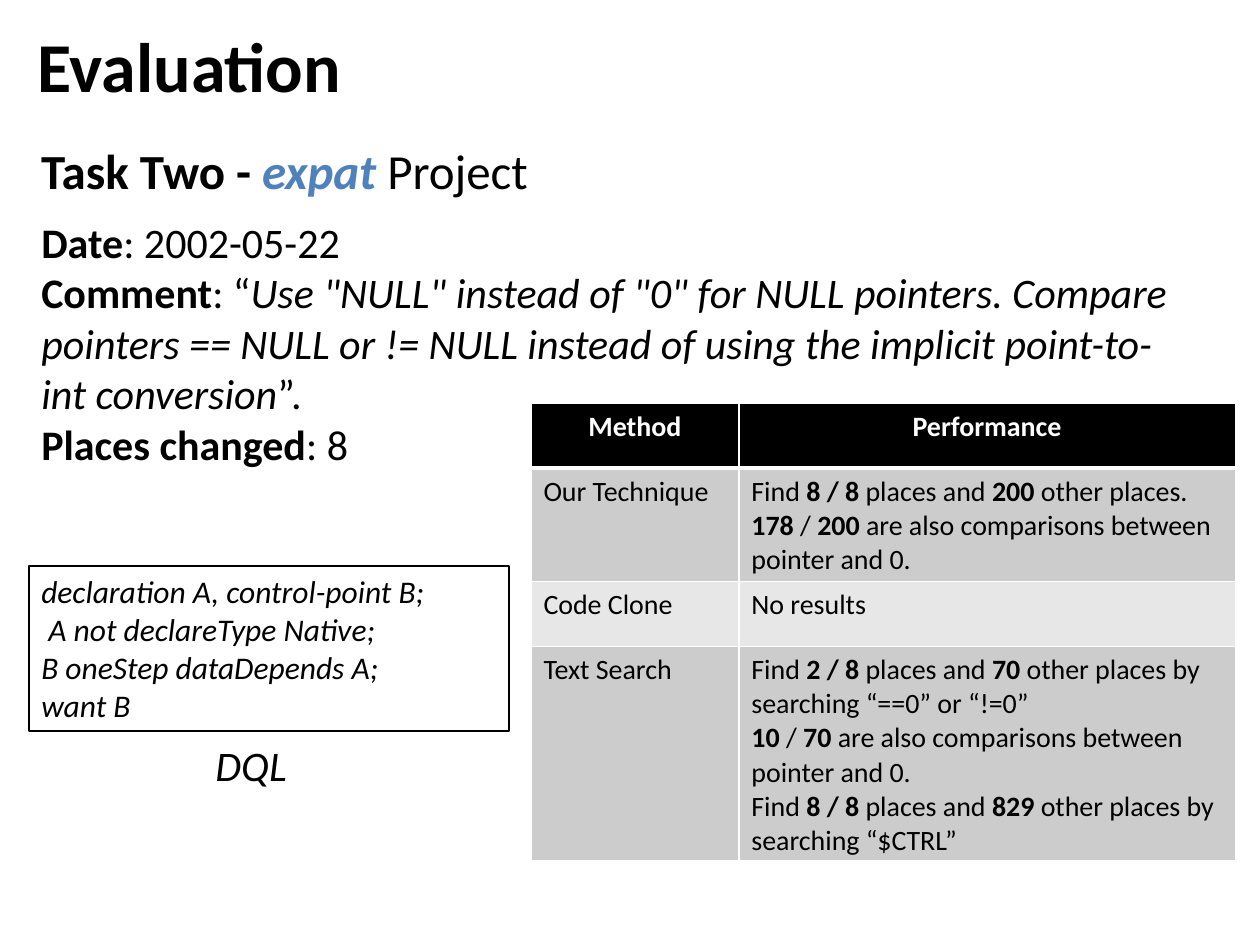
from lxml import etree
from pptx import Presentation
from pptx.dml.color import RGBColor
from pptx.enum.shapes import MSO_SHAPE
from pptx.enum.text import MSO_ANCHOR, PP_ALIGN
from pptx.oxml.ns import qn
from pptx.util import Pt

RECT = MSO_SHAPE.RECTANGLE
TOP = MSO_ANCHOR.TOP
LEFT, CENTER = PP_ALIGN.LEFT, PP_ALIGN.CENTER
FONT = "Calibri"
BLACK, WHITE, BLUE = "000000", "FFFFFF", "4F81BD"
BAND_DARK, BAND_LIGHT = "CCCCCC", "E7E7E7"

COMMENT = ('Use "NULL" instead of "0" for NULL pointers. Compare pointers == NULL '
           'or != NULL instead of using the implicit point-to-int conversion')
TASK = [[("Task Two - ", "b"), ("expat ", "bi", BLUE), ("Project", "")]]
CHANGE = [
    [("Date", "b"), (": 2002-05-22", "")],
    [("Comment", "b"), (": “", ""), (COMMENT, "i"), ("”.", "")],
    [("Places changed", "b"), (": 8", "")],
]
QUERY = [
    [(line, "i")] for line in (
        "declaration A, control-point B;",
        " A not declareType Native;",
        "B oneStep dataDepends A;",
        "want B",
    )
]


def found(hits, others, ending):
    return [("Find ", ""), (hits, "b"), (" places and ", ""), (others, "b"), (ending, "")]


def compared(part, whole):
    return [(part, "b"), (" / ", ""), (whole, "b"),
            ("are also comparisons between pointer and 0.", "")]


RESULTS = [
    ("Our Technique",
     [found("8 / 8", "200", " other places. ") + compared("178", "200 ")]),
    ("Code Clone", [[("No results", "")]]),
    ("Text Search",
     [found("2 / 8", "70 ", "other places by searching “==0” or “!=0”"),
      compared("10", "70 "),
      found("8 / 8", "829 ", "other places by searching “$CTRL”")]),
]


def rgb(color):
    return RGBColor.from_string(color)


def write(tf, paragraphs, size, color=BLACK, align=LEFT):
    """Fill a text frame; each run is (text, style letters b and i[, colour])."""
    for n, runs in enumerate(paragraphs):
        p = tf.paragraphs[0] if n == 0 else tf.add_paragraph()
        p.alignment = align
        for text, style, *own_color in runs:
            r = p.add_run()
            r.text = text
            fmt = {"name": FONT, "size": Pt(size), "bold": "b" in style, "italic": "i" in style}
            for key, value in fmt.items():
                setattr(r.font, key, value)
            r.font.color.rgb = rgb(own_color[0] if own_color else color)


def add_text(s, x, y, w, h, paragraphs, size, wrap=True):
    sp = s.shapes.add_textbox(Pt(x), Pt(y), Pt(w), Pt(h))
    sp.text_frame.word_wrap = wrap
    write(sp.text_frame, paragraphs, size)


def add_framed_text(s, x, y, w, h, paragraphs, size):
    sp = s.shapes.add_shape(RECT, Pt(x), Pt(y), Pt(w), Pt(h))
    sp.shadow.inherit = False
    sp.fill.background()
    sp.line.color.rgb = rgb(BLACK)
    sp.line.width = Pt(0.75)
    tf = sp.text_frame
    tf.word_wrap = True
    tf.vertical_anchor = TOP
    write(tf, paragraphs, size)


def set_borders(cell, top, bottom):
    """Draw white borders, 1 pt at the sides; call before the cell is filled."""
    tcPr = cell._tc.get_or_add_tcPr()
    for tag, width in {"a:lnL": 1, "a:lnR": 1, "a:lnT": top, "a:lnB": bottom}.items():
        ln = etree.SubElement(tcPr, qn(tag), w=str(Pt(width)))
        fill = etree.SubElement(ln, qn("a:solidFill"))
        etree.SubElement(fill, qn("a:srgbClr"), val=WHITE)


def add_results_table(s, x, y, widths, heights):
    header = [[[(title, "b")]] for title in ("Method", "Performance")]
    rows = [header] + [[[[(method, "")]], result] for method, result in RESULTS]
    table = s.shapes.add_table(len(rows), len(widths), Pt(x), Pt(y),
                               Pt(sum(widths)), Pt(sum(heights))).table
    for column, width in zip(table.columns, widths):
        column.width = Pt(width)
    for i, (row, height) in enumerate(zip(rows, heights)):
        table.rows[i].height = Pt(height)
        for j, paragraphs in enumerate(row):
            cell = table.cell(i, j)
            set_borders(cell, top=3 if i == 1 else 1, bottom=3 if i == 0 else 1)
            cell.fill.solid()
            if i == 0:
                cell.fill.fore_color.rgb = rgb(BLACK)
                write(cell.text_frame, paragraphs, 16, WHITE, CENTER)
            else:
                cell.fill.fore_color.rgb = rgb(BAND_DARK if i % 2 else BAND_LIGHT)
                write(cell.text_frame, paragraphs, 16)


def main():
    prs = Presentation()
    prs.slide_width, prs.slide_height = Pt(720), Pt(540)
    s = prs.slides.add_slide(prs.slide_layouts[6])
    add_text(s, 14.4, 9.4, 408, 55.4, [[("Evaluation", "b")]], 40)
    add_text(s, 16.5, 77, 587.5, 41, TASK, 28)
    add_text(s, 16.5, 120.2, 663, 152.6, CHANGE, 24)
    add_results_table(s, 303.4, 230.4, [118.8, 283.7], [37.1, 58.3, 37.1, 82.8])
    add_framed_text(s, 16.5, 323.5, 274.3, 94.3, QUERY, 18)
    add_text(s, 116, 419, 56.2, 36, [[("DQL", "i")]], 24, wrap=False)
    prs.save("out.pptx")


if __name__ == "__main__":
    main()
